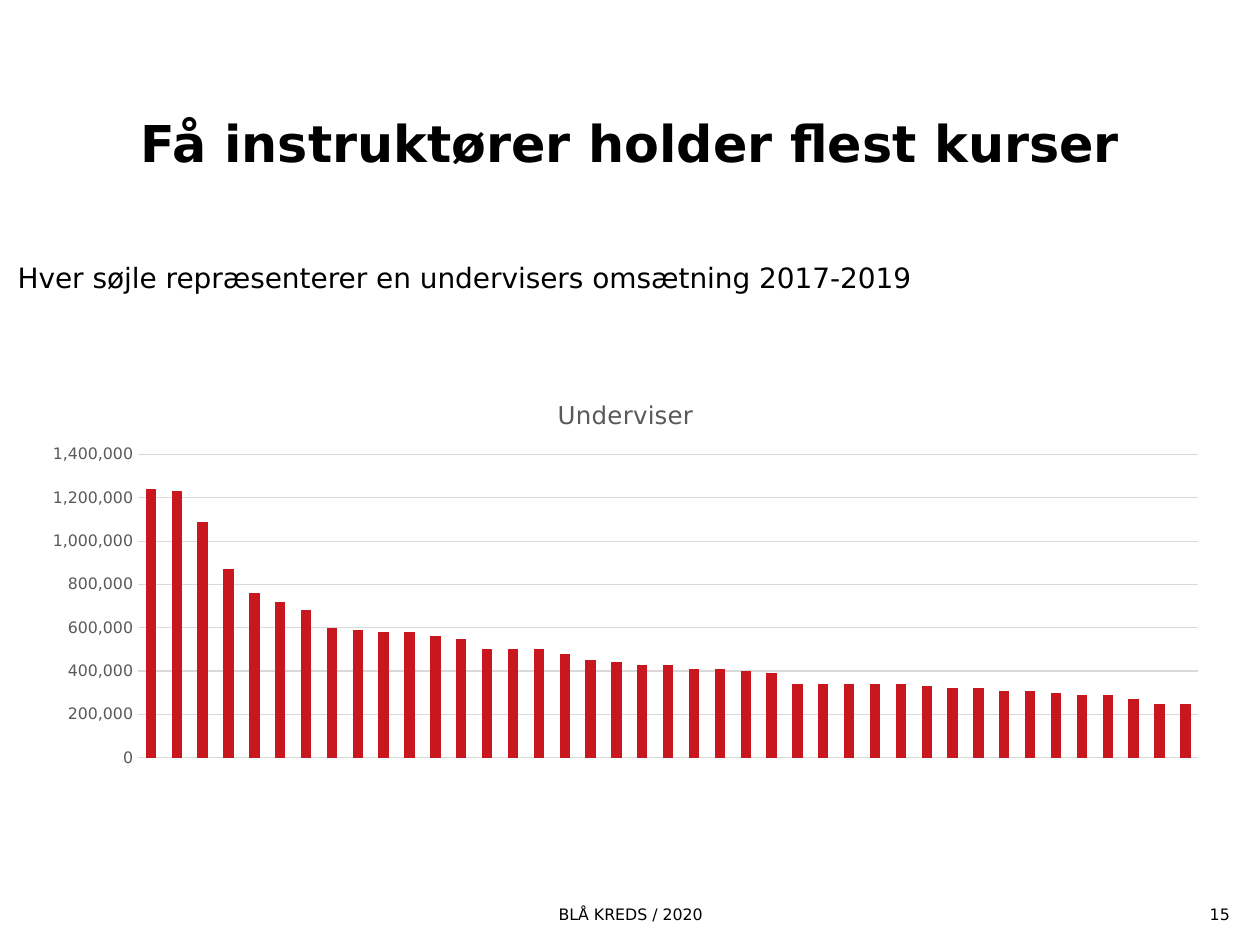
from dataclasses import dataclass

from pptx import Presentation
from pptx.chart.data import CategoryChartData
from pptx.dml.color import RGBColor
from pptx.enum.chart import XL_CHART_TYPE, XL_TICK_MARK
from pptx.enum.text import MSO_ANCHOR, PP_ALIGN
from pptx.util import Inches, Pt

FONT = "DejaVu Sans"
BLACK = RGBColor(0x00, 0x00, 0x00)
GRAY = RGBColor(0x59, 0x59, 0x59)
GRID = RGBColor(0xD9, 0xD9, 0xD9)
RED = RGBColor(0xC8, 0x17, 0x1E)
SALES = [
    1240, 1230, 1090, 870, 760, 720, 680, 600, 590, 580, 580, 560, 550, 500,
    500, 500, 480, 450, 440, 430, 430, 410, 410, 400, 390, 340, 340, 340,
    340, 340, 330, 320, 320, 310, 310, 300, 290, 290, 270, 250, 250,
]


@dataclass
class Label:
    text: str
    left: float
    top: float
    width: float
    height: float
    size: int
    align: PP_ALIGN
    anchor: MSO_ANCHOR = MSO_ANCHOR.TOP
    bold: bool = False
    space: float = 1.0


LABELS = [
    Label("Få instruktører holder flest kurser", 0.79, 0.94, 8.43, 0.57, 29,
          PP_ALIGN.CENTER, bold=True, space=0.9),
    Label("Hver søjle repræsenterer en undervisers omsætning 2017-2019",
          0.14, 2.04, 9.7, 0.4, 16, PP_ALIGN.LEFT, space=1.1),
    Label("BLÅ KREDS / 2020", 0.79, 7.13, 8.43, 0.25, 9,
          PP_ALIGN.CENTER, MSO_ANCHOR.MIDDLE),
    Label("15", 9.21, 7.13, 0.55, 0.25, 9,
          PP_ALIGN.RIGHT, MSO_ANCHOR.MIDDLE),
]


def style(font, size: int, color: RGBColor, bold: bool = False) -> None:
    font.name = FONT
    font.size = Pt(size)
    font.bold = bold
    font.color.rgb = color


def add_label(slide, label: Label) -> None:
    box = slide.shapes.add_textbox(
        Inches(label.left), Inches(label.top),
        Inches(label.width), Inches(label.height))
    frame = box.text_frame
    frame.word_wrap = True
    frame.margin_left = frame.margin_right = Inches(0)
    frame.margin_top = frame.margin_bottom = Inches(0)
    frame.vertical_anchor = label.anchor
    frame.text = label.text
    para = frame.paragraphs[0]
    para.alignment = label.align
    para.line_spacing = label.space
    style(para.runs[0].font, label.size, BLACK, label.bold)


def add_sales(slide) -> None:
    data = CategoryChartData(number_format="#,##0")
    data.categories = [str(rank) for rank in range(1, len(SALES) + 1)]
    data.add_series("Underviser", [sale * 1000 for sale in SALES])
    chart = slide.shapes.add_chart(
        XL_CHART_TYPE.COLUMN_STACKED, Inches(0.23), Inches(3.01),
        Inches(9.47), Inches(3.14), data).chart
    style(chart.font, 10, BLACK)
    chart.has_legend = False
    chart.has_title = True
    title = chart.chart_title
    title.include_in_layout = False
    title.text_frame.text = "Underviser"
    style(title.text_frame.paragraphs[0].runs[0].font, 14, GRAY)

    plot = chart.plots[0]
    plot.gap_width = 150
    plot.overlap = 100
    plot.vary_by_categories = False
    fill = plot.series[0].format.fill
    fill.solid()
    fill.fore_color.rgb = RED

    chart.category_axis.visible = False
    axis = chart.value_axis
    axis.minimum_scale = 0
    axis.maximum_scale = 1400000
    axis.major_unit = 200000
    axis.major_tick_mark = XL_TICK_MARK.NONE
    axis.minor_tick_mark = XL_TICK_MARK.NONE
    axis.format.line.fill.background()
    axis.tick_labels.number_format = "#,##0"
    axis.tick_labels.number_format_is_linked = False
    style(axis.tick_labels.font, 9, GRAY)
    line = axis.major_gridlines.format.line
    line.color.rgb = GRID
    line.width = Pt(0.75)


def main() -> None:
    deck = Presentation()
    deck.slide_width = Inches(10)
    deck.slide_height = Inches(7.5)
    slide = deck.slides.add_slide(deck.slide_layouts[6])
    for label in LABELS:
        add_label(slide, label)
    add_sales(slide)
    deck.save("out.pptx")


if __name__ == "__main__":
    main()
